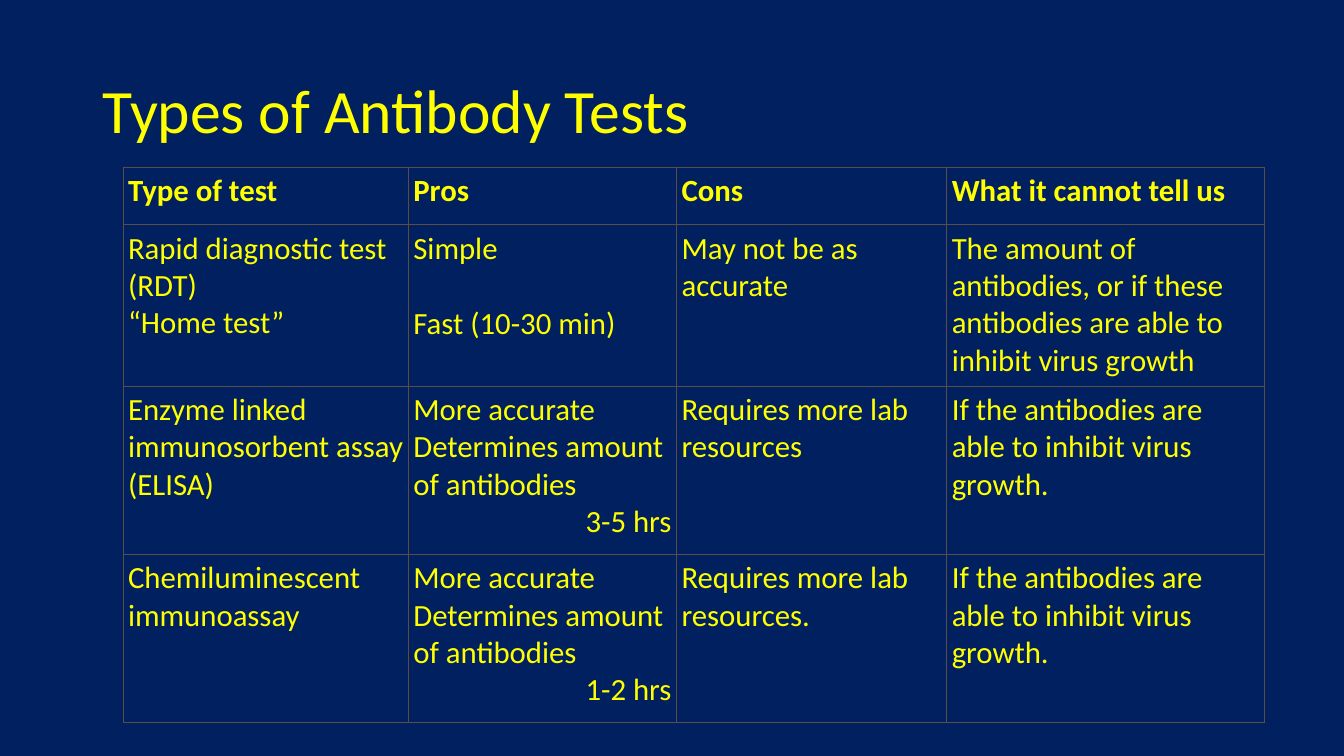
import dataclasses

import lxml.etree
import pptx
import pptx.dml.color
import pptx.enum.text
import pptx.oxml.ns
import pptx.util

Inches = pptx.util.Inches
Pt = pptx.util.Pt
ALIGN = pptx.enum.text.PP_ALIGN
ANCHOR = pptx.enum.text.MSO_ANCHOR


@dataclasses.dataclass(frozen=True)
class Theme:
    font: str = "Calibri"
    background: str = "002060"
    text: str = "FFFF00"
    border: str = "594D45"
    title_size: float = 44
    cell_size: float = 22
    border_width: float = 0.75
    cell_inset: float = 0.05


@dataclasses.dataclass(frozen=True)
class Line:
    """One paragraph of a cell, with its alignment and the gap below it in points."""
    text: str
    align: ALIGN = ALIGN.LEFT
    gap: float = 0


THEME = Theme()
TITLE_BOX = (0.92, 0.4, 11.5, 1.45)
TABLE_BOX = (1.22, 1.66, 11.32, 5.51)
COLUMN_WIDTHS = (2.83, 2.66, 2.68, 3.15)
ROW_HEIGHTS = (0.57, 1.6, 1.67, 1.67)


def lab_pros(duration):
    return [
        Line("More accurate"),
        Line("Determines amount of antibodies"),
        Line(duration, align=ALIGN.RIGHT),
    ]


NO_INHIBITION = [Line("If the antibodies are able to inhibit virus growth.")]
ROWS = [
    [[Line(heading)] for heading in
     ("Type of test", "Pros", "Cons", "What it cannot tell us")],
    [
        [Line("Rapid diagnostic test (RDT)"), Line("“Home test”")],
        [Line("Simple", gap=27), Line("Fast (10-30 min)")],
        [Line("May not be as accurate")],
        [Line("The amount of antibodies, or if these antibodies "
              "are able to inhibit virus growth")],
    ],
    [
        [Line("Enzyme linked immunosorbent assay (ELISA)")],
        lab_pros("3-5 hrs"),
        [Line("Requires more lab resources")],
        NO_INHIBITION,
    ],
    [
        [Line("Chemiluminescent immunoassay")],
        lab_pros("1-2 hrs"),
        [Line("Requires more lab resources.")],
        NO_INHIBITION,
    ],
]


def color(value):
    return pptx.dml.color.RGBColor.from_string(value)


def write(para, text, *, size, bold=False, align=ALIGN.LEFT, spacing=1.0, gap=0):
    para.alignment = align
    para.line_spacing = spacing
    para.space_before = Pt(0)
    para.space_after = Pt(gap)
    span = para.add_run()
    span.text = text
    span.font.name = THEME.font
    span.font.size = Pt(size)
    span.font.bold = bold
    span.font.color.rgb = color(THEME.text)


def draw_borders(cell):
    properties = cell._tc.get_or_add_tcPr()
    qn = pptx.oxml.ns.qn
    for side in ("a:lnL", "a:lnR", "a:lnT", "a:lnB"):
        line = lxml.etree.SubElement(
            properties, qn(side), w=str(Pt(THEME.border_width)))
        fill = lxml.etree.SubElement(line, qn("a:solidFill"))
        lxml.etree.SubElement(fill, qn("a:srgbClr"), val=THEME.border)


def fill_cell(cell, lines, bold):
    draw_borders(cell)
    cell.fill.solid()
    cell.fill.fore_color.rgb = color(THEME.background)
    cell.vertical_anchor = ANCHOR.TOP
    inset = Inches(THEME.cell_inset)
    cell.margin_left = cell.margin_right = inset
    cell.margin_top = cell.margin_bottom = inset
    frame = cell.text_frame
    for index, line in enumerate(lines):
        para = frame.add_paragraph() if index else frame.paragraphs[0]
        write(para, line.text, size=THEME.cell_size, bold=bold,
              align=line.align, gap=line.gap)


def place_title(page, box, text):
    title = page.shapes.title
    title.left, title.top, title.width, title.height = map(Inches, box)
    frame = title.text_frame
    frame.word_wrap = True
    frame.vertical_anchor = ANCHOR.MIDDLE
    write(frame.paragraphs[0], text, size=THEME.title_size, spacing=0.9)


def place_table(page, box, rows):
    table = page.shapes.add_table(
        len(rows), len(rows[0]), *map(Inches, box)).table
    table.first_row = False
    table.horz_banding = False
    for column, width in zip(table.columns, COLUMN_WIDTHS):
        column.width = Inches(width)
    for row, height in zip(table.rows, ROW_HEIGHTS):
        row.height = Inches(height)
    for row_index, row in enumerate(rows):
        for column_index, lines in enumerate(row):
            fill_cell(table.cell(row_index, column_index), lines,
                      bold=row_index == 0)


def build_tests_page(deck):
    page = deck.slides.add_slide(deck.slide_layouts.get_by_name("Title Only"))
    page.background.fill.solid()
    page.background.fill.fore_color.rgb = color(THEME.background)
    place_title(page, TITLE_BOX, "Types of Antibody Tests")
    place_table(page, TABLE_BOX, ROWS)


def main():
    deck = pptx.Presentation()
    deck.slide_width = Inches(13.33)
    deck.slide_height = Inches(7.5)
    build_tests_page(deck)
    deck.save("out.pptx")


if __name__ == "__main__":
    main()
